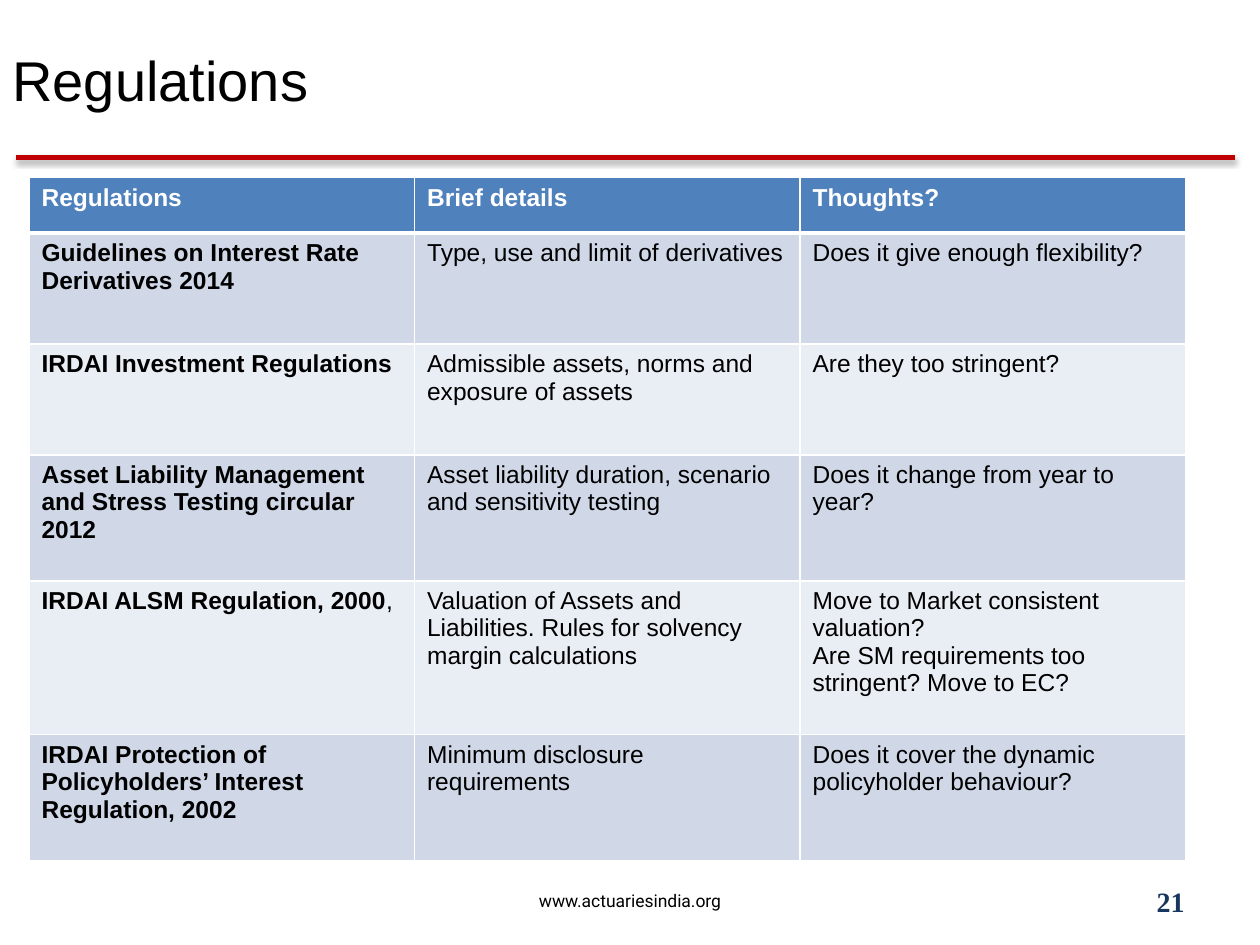
from dataclasses import dataclass

from lxml import etree
from pptx import Presentation
from pptx.dml.color import RGBColor
from pptx.enum.shapes import MSO_CONNECTOR
from pptx.enum.text import MSO_ANCHOR, PP_ALIGN
from pptx.oxml import parse_xml
from pptx.oxml.ns import nsdecls, qn
from pptx.util import Inches, Pt

STRAIGHT = MSO_CONNECTOR.STRAIGHT
MIDDLE = MSO_ANCHOR.MIDDLE
LEFT, CENTER, RIGHT = PP_ALIGN.LEFT, PP_ALIGN.CENTER, PP_ALIGN.RIGHT

WIDTH, HEIGHT = 10, 7.5
BLACK, WHITE, RED, NAVY = "000000", "FFFFFF", "C00000", "17375E"
HEADER_FILL, BAND_FILLS = "4F81BD", ("D0D8E8", "E9EDF4")

# Table grid, in inches
TABLE_LEFT, TABLE_TOP, COLUMN_WIDTH = 0.23, 1.41, 3.06
HEADINGS = ("Regulations", "Brief details", "Thoughts?")
HEADER_HEIGHT = 0.44


@dataclass(frozen=True)
class Regulation:
    name: str
    details: str
    thoughts: tuple[str, ...]
    height: float
    name_tail: str = ""  # regular-weight text after the bold name


REGULATIONS = (
    Regulation("Guidelines on Interest Rate Derivatives 2014",
               "Type, use and limit of derivatives",
               ("Does it give enough flexibility?",), 0.88),
    Regulation("IRDAI Investment Regulations",
               "Admissible assets, norms and exposure of assets",
               ("Are they too stringent?",), 0.88),
    Regulation("Asset Liability Management and Stress Testing circular 2012",
               "Asset liability duration, scenario and sensitivity testing",
               ("Does it change from year to year?",), 1),
    Regulation("IRDAI ALSM Regulation, 2000",
               "Valuation of Assets and Liabilities. Rules for solvency margin calculations",
               ("Move to Market consistent valuation?",
                "Are SM requirements too stringent? Move to EC?"), 1.22, ","),
    Regulation("IRDAI Protection of Policyholders’ Interest Regulation, 2002",
               "Minimum disclosure requirements",
               ("Does it cover the dynamic policyholder behaviour?",), 1),
)


def color(value: str) -> RGBColor:
    return RGBColor.from_string(value)


def add_span(para, text: str, *, size: float = 14, font: str = "Arial",
             fill: str = BLACK, bold: bool = False) -> None:
    span = para.add_run()
    span.text = text
    span.font.size, span.font.name, span.font.bold = Pt(size), font, bold
    span.font.color.rgb = color(fill)


def add_text(page, text: str, left: float, top: float, width: float, height: float,
             *, align=LEFT, **style) -> None:
    """Add a text box; its place is given as shares of the slide's size."""
    box = page.shapes.add_textbox(Inches(left * WIDTH), Inches(top * HEIGHT),
                                  Inches(width * WIDTH), Inches(height * HEIGHT))
    frame = box.text_frame
    frame.word_wrap = True
    frame.vertical_anchor = MIDDLE
    frame.paragraphs[0].alignment = align
    add_span(frame.paragraphs[0], text, **style)


def add_rule(page) -> None:
    """Draw the red rule with a soft shadow beneath it."""
    rule = page.shapes.add_connector(STRAIGHT, Inches(0.13), Inches(1.25),
                                     Inches(9.8), Inches(1.25))
    rule.line.color.rgb = color(RED)
    rule.line.width = Pt(3)
    rule._element.spPr.append(parse_xml(
        f'<a:effectLst {nsdecls("a")}>'
        f'<a:outerShdw blurRad="{Pt(3.1)}" dist="{Pt(1.6)}" dir="5400000" rotWithShape="0">'
        f'<a:srgbClr val="{BLACK}"><a:alpha val="38000"/></a:srgbClr>'
        '</a:outerShdw></a:effectLst>'))


def style_cell(cell, fill: str, top: float = 1, bottom: float = 1) -> None:
    """Set white borders, then the fill, which must follow them in the XML."""
    properties = cell._tc.get_or_add_tcPr()
    for side, points in (("L", 1), ("R", 1), ("T", top), ("B", bottom)):
        line = etree.SubElement(properties, qn(f"a:ln{side}"), w=str(Pt(points)))
        solid = etree.SubElement(line, qn("a:solidFill"))
        etree.SubElement(solid, qn("a:srgbClr"), val=WHITE)
    cell.fill.solid()
    cell.fill.fore_color.rgb = color(fill)


def add_regulation_table(page) -> None:
    heights = [HEADER_HEIGHT] + [entry.height for entry in REGULATIONS]
    table = page.shapes.add_table(
        len(heights), len(HEADINGS), Inches(TABLE_LEFT), Inches(TABLE_TOP),
        Inches(COLUMN_WIDTH * len(HEADINGS)), Inches(sum(heights))).table
    table.horz_banding = False
    for column in table.columns:
        column.width = Inches(COLUMN_WIDTH)
    for row, height in zip(table.rows, heights):
        row.height = Inches(height)

    # Header row
    for cell, heading in zip(table.rows[0].cells, HEADINGS):
        style_cell(cell, HEADER_FILL, bottom=3)
        add_span(cell.text_frame.paragraphs[0], heading, fill=WHITE, bold=True)

    # One banded row for each regulation
    for index, entry in enumerate(REGULATIONS):
        cells = list(table.rows[index + 1].cells)
        for cell in cells:
            style_cell(cell, BAND_FILLS[index % 2], top=1 if index else 3)
        name, details, thoughts = (cell.text_frame for cell in cells)
        add_span(name.paragraphs[0], entry.name, bold=True)
        if entry.name_tail:
            add_span(name.paragraphs[0], entry.name_tail)
        add_span(details.paragraphs[0], entry.details)
        for order, thought in enumerate(entry.thoughts):
            para = thoughts.add_paragraph() if order else thoughts.paragraphs[0]
            add_span(para, thought)


def main() -> None:
    deck = Presentation()
    deck.slide_width, deck.slide_height = Inches(WIDTH), Inches(HEIGHT)
    page = deck.slides.add_slide(deck.slide_layouts[6])

    # Footer and page number
    add_rule(page)
    add_text(page, "www.actuariesindia.org", 0, 6.95 / HEIGHT, 1, 0.4 / HEIGHT,
             align=CENTER, size=10, font="Roboto")
    add_text(page, "21", 0.717, 6.95 / HEIGHT, 0.233, 0.4 / HEIGHT,
             align=RIGHT, size=16, font="Times New Roman", fill=NAVY, bold=True)

    # Title and table
    add_text(page, "Regulations", 0, 0, 0.9, 1 / 6, size=32)
    add_regulation_table(page)
    deck.save("out.pptx")


if __name__ == "__main__":
    main()
